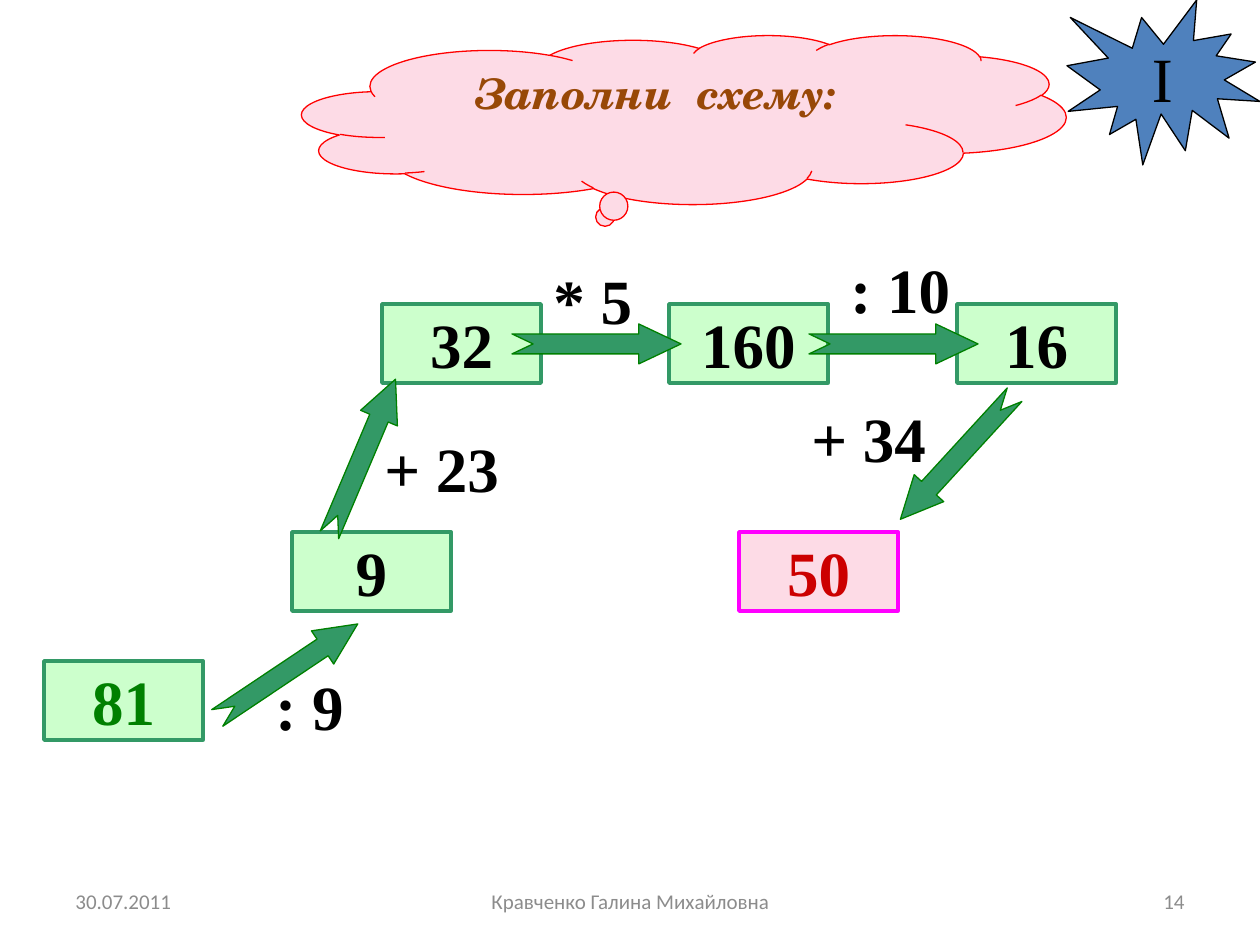
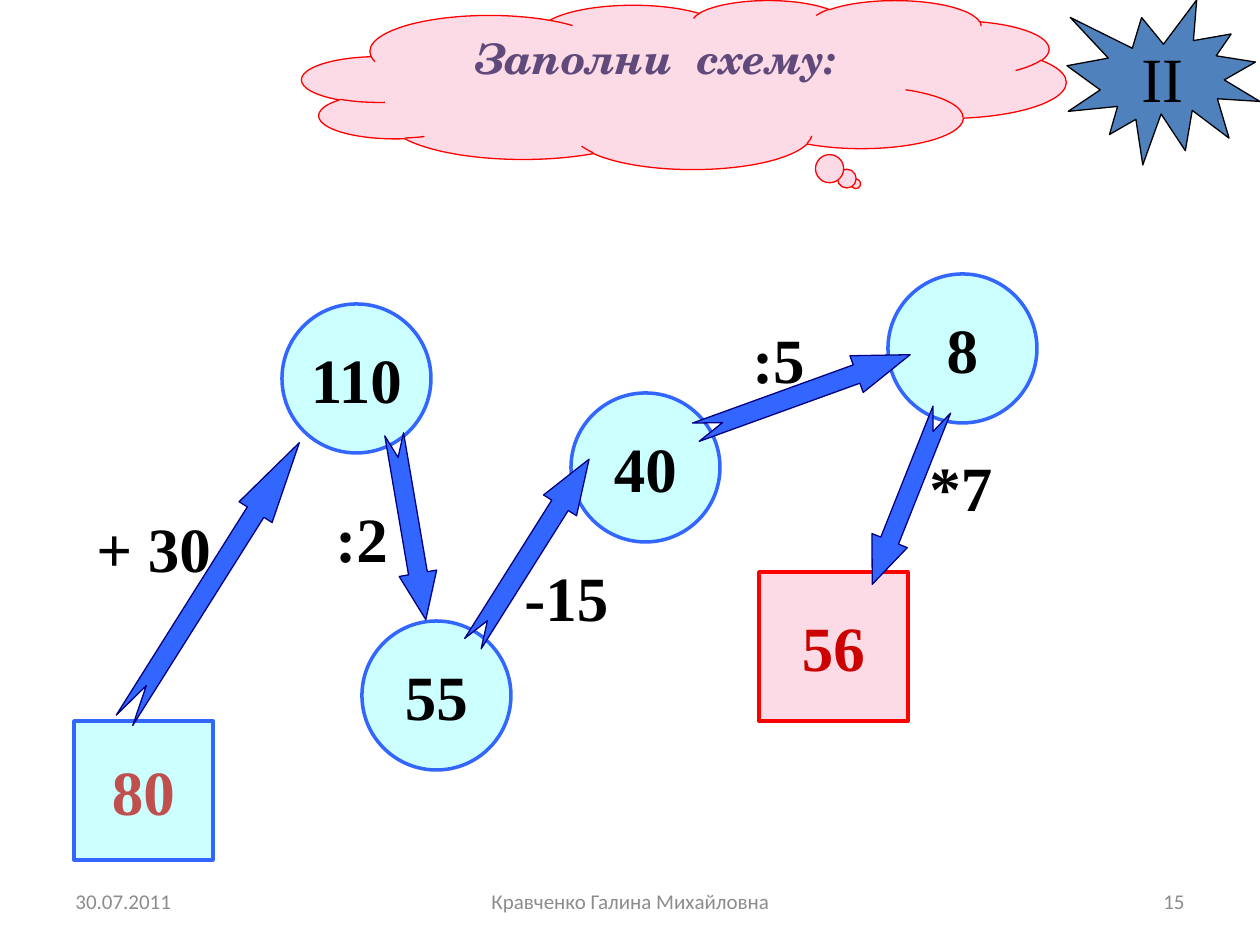
from pptx import Presentation
from pptx import util as u
from pptx.dml.color import RGBColor
from pptx.enum import shapes, text

SCALE = 914400 / 126  # EMU in one px
WIDTH, HEIGHT = 1260, 945

WHITE = RGBColor(0xFF, 0xFF, 0xFF)
BLACK = RGBColor(0, 0, 0)
GREY = RGBColor(0x8C, 0x8C, 0x8C)
PINK = RGBColor(0xFD, 0xDB, 0xE6)
RED = RGBColor(0xFF, 0, 0)
DARK_RED = RGBColor(0xCC, 0, 0)
BRICK = RGBColor(0xC0, 0x50, 0x4D)
MAGENTA = RGBColor(0xFF, 0, 0xFF)
BROWN = RGBColor(0x98, 0x48, 0x07)
PURPLE = RGBColor(0x60, 0x4A, 0x7B)
STEEL = RGBColor(0x4F, 0x81, 0xBD)
MINT = RGBColor(0xCC, 0xFF, 0xCC)
SEA_GREEN = RGBColor(0x33, 0x99, 0x66)
GREEN = RGBColor(0, 0x80, 0)
AQUA = RGBColor(0xCC, 0xFF, 0xFF)
BLUE = RGBColor(0x33, 0x66, 0xFF)
NAVY = RGBColor(0, 0, 0x80)

TITLE_FONT, NUMBER_FONT, FOOTER_FONT = "TeX Gyre Schola", "Times New Roman", "Calibri"
SHAPE, ALIGN = shapes.MSO_SHAPE, text.PP_ALIGN
TITLE_TEXT = "Заполни  схему:"
DATE, AUTHOR = "30.07.2011", "Кравченко Галина Михайловна"


def px(*lengths):
    return [u.Emu(round(length * SCALE)) for length in lengths]


class SchemeDeck:
    def __init__(self):
        self.deck = Presentation()
        self.deck.slide_width, self.deck.slide_height = px(WIDTH, HEIGHT)
        self.slide = None

    def start(self, number, numeral, title_color, cloud_top, cloud_tail):
        """Add a slide with its cloud title, star and footer."""
        self.slide = self.deck.slides.add_slide(self.deck.slide_layouts[5])
        self.slide.background.fill.solid()
        self.slide.background.fill.fore_color.rgb = WHITE
        self.title(title_color, cloud_top, cloud_tail)
        star = self.shape(SHAPE.EXPLOSION1, 1067, 0, 193, 165, STEEL, BLACK)
        self.set_text(star, numeral, NUMBER_FONT, 36, BLACK, wrap=False)
        for x, width, words, align in (
            (63, 294, DATE, ALIGN.LEFT),
            (903, 294, str(number), ALIGN.RIGHT),
            (431, 399, AUTHOR, ALIGN.CENTER),
        ):
            box = self.slide.shapes.add_textbox(*px(x, 876, width, 50))
            self.set_text(box, words, FOOTER_FONT, 12, GREY, align)

    def title(self, color, top, tail):
        cloud = self.shape(SHAPE.CLOUD_CALLOUT, 302, top, 764, 169, PINK, RED, adjust=tail)
        title = self.slide.shapes.title
        title.left, title.top, title.width, title.height = px(407, top + 26, 499, 109)
        self.set_text(title, TITLE_TEXT, TITLE_FONT, 24, color, anchor=text.MSO_ANCHOR.TOP)
        title.text_frame.auto_size = text.MSO_AUTO_SIZE.NONE
        title.text_frame.paragraphs[0].font.bold = True
        title.text_frame.paragraphs[0].font.italic = True
        cloud._element.addnext(title._element)  # the words lie over the cloud

    def shape(self, kind, x, y, width, height, fill, line, weight=0.75, adjust=()):
        shape = self.slide.shapes.add_shape(kind, *px(x, y, width, height))
        shape.shadow.inherit = False
        shape.fill.solid()
        shape.fill.fore_color.rgb = fill
        shape.line.color.rgb = line
        shape.line.width = u.Pt(weight)
        for index, value in enumerate(adjust):
            shape.adjustments[index] = value
        return shape

    def set_text(self, shape, words, font, size, color, align=ALIGN.CENTER,
                 anchor=text.MSO_ANCHOR.MIDDLE, bold=False, wrap=True):
        frame = shape.text_frame
        frame.word_wrap = wrap
        frame.vertical_anchor = anchor
        para = frame.paragraphs[0]
        para.text = words
        para.alignment = align
        para.font.name = font
        para.font.size = u.Pt(size)
        para.font.bold = bold
        para.font.color.rgb = color

    def node(self, kind, words, x, y, width, height, fill, line, color=BLACK):
        node = self.shape(kind, x, y, width, height, fill, line, weight=2)
        self.set_text(node, words, NUMBER_FONT, 36, color, bold=True, wrap=False)

    def arrow(self, x, y, length, thickness, rotation, fill, line):
        """Draw a notched arrow whose head takes a quarter of its length."""
        head = length / (4 * thickness)
        arrow = self.shape(SHAPE.NOTCHED_RIGHT_ARROW, x, y, length, thickness,
                           fill, line, adjust=(0.5, head))
        arrow.rotation = rotation

    def operation(self, words, x, y, width):
        box = self.slide.shapes.add_textbox(*px(x, y, width, 88))
        self.set_text(box, words, NUMBER_FONT, 36, BLACK, ALIGN.LEFT,
                      text.MSO_ANCHOR.TOP, bold=True, wrap=False)
        box.text_frame.auto_size = text.MSO_AUTO_SIZE.SHAPE_TO_FIT_TEXT


def build_first_scheme(scheme):
    scheme.start(14, "I", BROWN, 35, (-0.107, 0.597))
    for words, x, y, fill, line, color in (
        ("81", 44, 661, MINT, SEA_GREEN, GREEN),
        ("9", 292, 532, MINT, SEA_GREEN, BLACK),
        ("32", 382, 304, MINT, SEA_GREEN, BLACK),
        ("50", 739, 532, PINK, MAGENTA, DARK_RED),
        ("160", 669, 304, MINT, SEA_GREEN, BLACK),
        ("16", 957, 304, MINT, SEA_GREEN, BLACK),
    ):
        scheme.node(SHAPE.RECTANGLE, words, x, y, 159, 79, fill, line, color)
    for (x, y, rotation), label in (
        ((203, 651, 326.2), (": 9", 263, 661, 93)),
        ((278, 437, 293), ("+ 23", 372, 423, 140)),
        ((512, 324, 0), ("* 5", 541, 255, 105)),
        ((809, 324, 0), (": 10", 838, 244, 125)),
        ((873, 437, 132.5), ("+ 34", 799, 393, 140)),
    ):
        scheme.arrow(x, y, 169, 40, rotation, SEA_GREEN, GREEN)
        scheme.operation(*label)


def build_second_scheme(scheme):
    scheme.start(15, "II", PURPLE, 0, (0.225, 0.588))
    scheme.node(SHAPE.RECTANGLE, "80", 74, 721, 139, 139, AQUA, BLUE, BRICK)
    for words, x, y in (("55", 362, 621), ("110", 282, 304), ("40", 571, 393), ("8", 888, 274)):
        scheme.node(SHAPE.OVAL, words, x, y, 149, 149, AQUA, BLUE)
    scheme.node(SHAPE.RECTANGLE, "56", 759, 572, 149, 149, PINK, RED, DARK_RED)
    for place, label in (
        ((48, 562, 328, 39, 302.2), ("+ 30", 84, 503, 140)),
        ((316, 508, 188, 38, 80.3), (":2", 323, 493, 78)),
        ((422, 532, 218, 39, 302.2), ("-15", 512, 552, 110)),
        ((689, 374, 228, 39, 340.1), (":5", 740, 314, 78)),
        ((813, 478, 188, 38, 111.7), ("*7", 917, 442, 88)),
    ):
        scheme.arrow(*place, BLUE, NAVY)
        scheme.operation(*label)


def main():
    scheme = SchemeDeck()
    build_first_scheme(scheme)
    build_second_scheme(scheme)
    scheme.deck.save("out.pptx")


if __name__ == "__main__":
    main()
